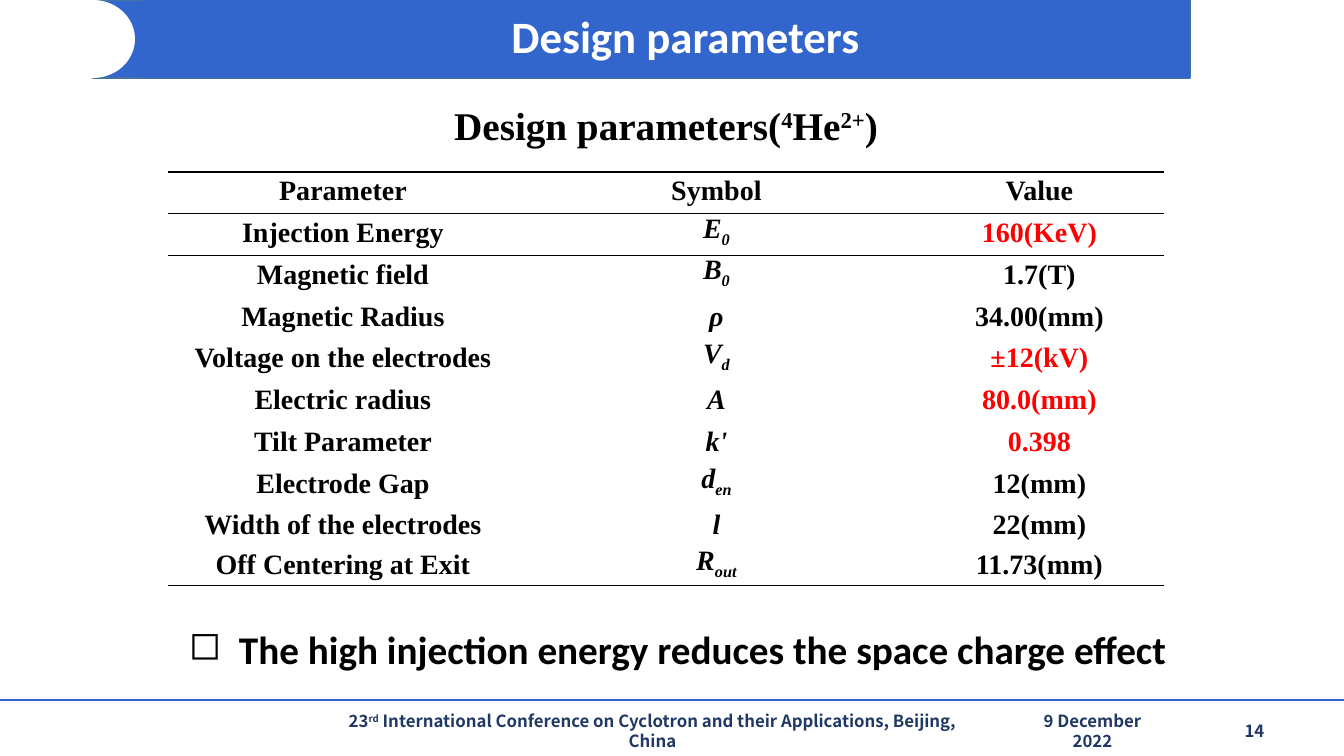
"""Build the design parameters slide with its table, takeaway and footer."""
from lxml import etree
from pptx import Presentation, util as u
from pptx.dml.color import RGBColor
from pptx.enum import shapes, text
from pptx.oxml.ns import qn

COLORS = {"blue": "3366CC", "outline": "43739E", "navy": "203864",
          "white": "FFFFFF", "black": "000000", "red": "FF0000"}
SERIF, SANS, FOOTER_FONT = "Times New Roman", "Calibri", "Noto Sans CJK SC"
SUPER, SUB = 30000, -25000

TITLE = "Design parameters"
TABLE_TITLE = [("Design parameters(", 0), ("4", SUPER), ("He", 0), ("2+", SUPER), (")", 0)]
HEADERS = ["Parameter", "Symbol", "Value"]
PARAMETERS = [
    ("Injection Energy", "E", "0", "160(KeV)", "red"),
    ("Magnetic field", "B", "0", "1.7(T)", "black"),
    ("Magnetic Radius", "ρ", "", "34.00(mm)", "black"),
    ("Voltage on the electrodes", "V", "d", "±12(kV)", "red"),
    ("Electric radius", "A", "", "80.0(mm)", "red"),
    ("Tilt Parameter", "k'", "", "0.398", "red"),
    ("Electrode Gap", "d", "en", "12(mm)", "black"),
    ("Width of the electrodes", "l", "", "22(mm)", "black"),
    ("Off Centering at Exit", "R", "out", "11.73(mm)", "black"),
]
TAKEAWAY = "The high injection energy reduces the space charge effect"
FOOTERS = [
    ((1013, 711, 159, 40), [("9 December 2022", 0)]),
    ((329, 711, 647, 40), [("23", 0), ("rd", SUPER), (
        " International Conference on Cyclotron and their Applications, Beijing, China", 0)]),
    ((1209, 711, 91, 40), [("14", 0)]),
]

SLIDE_SIZE = (1344, 756)
TABLE_BOX = (168, 97, 996, 489)
COLUMN_WIDTHS = [350, 397, 249]
TITLE_ROW, REGULAR_ROWS, LAST_ROW = 75, 376, 38
RULES = {0: 1, 1: 1, 2: 1.5, len(PARAMETERS) + 1: 1}


def px(length):
    return u.Emu(round(length * 914400 / 100.8))


def color(name):
    return RGBColor.from_string(COLORS[name])


def write(paragraph, runs, size, font, ink="black", align=text.PP_ALIGN.CENTER, italic=False):
    for words, baseline in runs:
        run = paragraph.add_run()
        run.text = words
        if baseline:
            run.font._element.set("baseline", str(baseline))
    paragraph.alignment = align
    paragraph.font.size = u.Pt(size)
    paragraph.font.name = font
    paragraph.font.bold = True
    paragraph.font.italic = italic
    paragraph.font.color.rgb = color(ink)


def add_filled(slide, kind, box, fill, line=None):
    shape = slide.shapes.add_shape(kind, *map(px, box))
    shape.shadow.inherit = False
    shape.fill.solid()
    shape.fill.fore_color.rgb = color(fill)
    if line:
        shape.line.color.rgb = color(line)
        shape.line.width = u.Pt(1)
    else:
        shape.line.fill.background()
    return shape


def add_text_box(slide, box, anchor):
    frame = slide.shapes.add_textbox(*map(px, box)).text_frame
    frame.word_wrap = True
    frame.vertical_anchor = anchor
    return frame.paragraphs[0]


def set_borders(cell, top, bottom):
    properties = cell._tc.get_or_add_tcPr()
    widths = {"a:lnL": None, "a:lnR": None, "a:lnT": top, "a:lnB": bottom}
    for position, (tag, width) in enumerate(widths.items()):
        border = etree.Element(qn(tag))
        if width:
            border.set("w", str(u.Pt(width)))
            fill = etree.SubElement(border, qn("a:solidFill"))
            etree.SubElement(fill, qn("a:srgbClr"), val=COLORS["black"])
        else:
            etree.SubElement(border, qn("a:noFill"))
        properties.insert(position, border)


def fill_cell(cell, runs, size=20, ink="black", italic=False):
    cell.vertical_anchor = text.MSO_ANCHOR.MIDDLE
    paragraph = cell.text_frame.paragraphs[0]
    write(paragraph, runs, size, SERIF, ink, italic=italic)
    paragraph.line_spacing = u.Pt(20)


def add_parameter_table(slide):
    row_count = len(PARAMETERS) + 2
    table = slide.shapes.add_table(row_count, len(HEADERS), *map(px, TABLE_BOX)).table
    table.first_row = table.horz_banding = False
    for column, width in zip(table.columns, COLUMN_WIDTHS):
        column.width = px(width)
    regular = REGULAR_ROWS / (row_count - 2)
    heights = [TITLE_ROW] + [regular] * (row_count - 2) + [LAST_ROW]
    for index, (row, height) in enumerate(zip(table.rows, heights)):
        row.height = px(height)
        for cell in row.cells:
            cell.fill.background()
            set_borders(cell, RULES.get(index - 1), RULES.get(index))
    table.cell(0, 0).merge(table.cell(0, len(HEADERS) - 1))
    fill_cell(table.cell(0, 0), TABLE_TITLE, size=28)
    for column, header in enumerate(HEADERS):
        fill_cell(table.cell(1, column), [(header, 0)])
    for row, (name, symbol, subscript, value, ink) in enumerate(PARAMETERS, 2):
        symbol_runs = [(symbol, 0)] + ([(subscript, SUB)] if subscript else [])
        fill_cell(table.cell(row, 0), [(name, 0)])
        fill_cell(table.cell(row, 1), symbol_runs, italic=True)
        fill_cell(table.cell(row, 2), [(value, 0)], ink=ink)


def add_takeaway(slide):
    paragraph = add_text_box(slide, (179, 620, 1009, 57), text.MSO_ANCHOR.TOP)
    properties = paragraph._p.get_or_add_pPr()
    properties.set("marL", str(px(50)))
    properties.set("indent", str(-px(50)))
    etree.SubElement(properties, qn("a:buChar"), char="◻")
    write(paragraph, [(TAKEAWAY, 0)], 28, SANS, align=text.PP_ALIGN.LEFT)


def main():
    presentation = Presentation()
    presentation.slide_width, presentation.slide_height = map(px, SLIDE_SIZE)
    slide = presentation.slides.add_slide(presentation.slide_layouts[6])

    rectangle, oval = shapes.MSO_SHAPE.RECTANGLE, shapes.MSO_SHAPE.OVAL
    add_filled(slide, rectangle, (93, 0, 1097, 78), "blue", "outline")
    footer_rule = slide.shapes.add_connector(
        shapes.MSO_CONNECTOR.STRAIGHT, *map(px, (0, 700, SLIDE_SIZE[0], 700)))
    footer_rule.line.color.rgb = color("blue")
    footer_rule.line.width = u.Pt(1.75)
    etree.SubElement(footer_rule._element.spPr, qn("a:effectLst"))
    add_filled(slide, oval, (51, 0, 84, 78), "white")

    title = add_filled(slide, rectangle, (142, 0, 1048, 78), "blue").text_frame
    title.vertical_anchor = text.MSO_ANCHOR.MIDDLE
    heading = title.paragraphs[0]
    heading._p.get_or_add_pPr().set("marL", str(px(39)))
    write(heading, [(TITLE, 0)], 32, SANS, "white")
    heading.line_spacing = 0.9

    for box, runs in FOOTERS:
        write(add_text_box(slide, box, text.MSO_ANCHOR.MIDDLE), runs, 12, FOOTER_FONT, "navy")
    add_parameter_table(slide)
    add_takeaway(slide)
    presentation.save("out.pptx")


if __name__ == "__main__":
    main()
